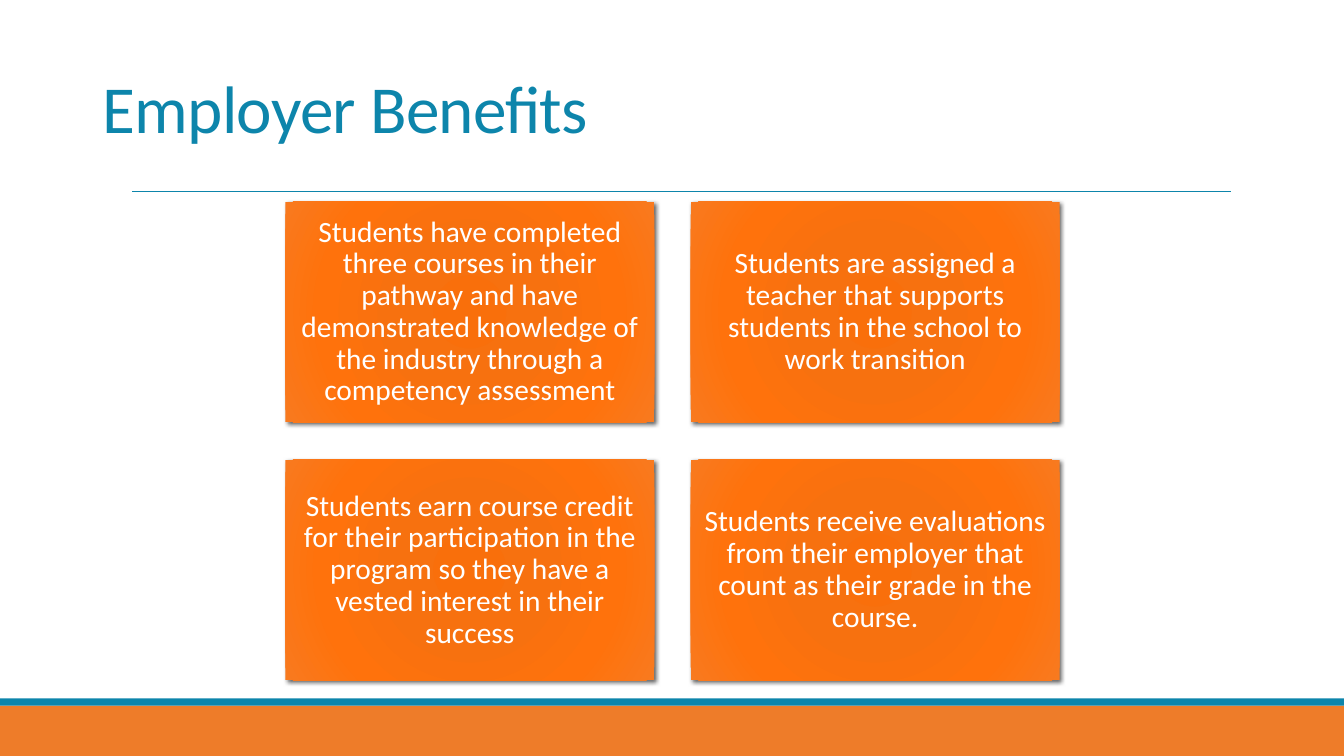
import pptx
import pptx.util
import pptx.dml.color
import pptx.enum.shapes
import pptx.enum.text
import pptx.oxml
import pptx.oxml.ns

Inches, Pt = pptx.util.Inches, pptx.util.Pt
RECT = pptx.enum.shapes.MSO_SHAPE.RECTANGLE
LINE = pptx.enum.shapes.MSO_CONNECTOR.STRAIGHT
ALIGN = pptx.enum.text.PP_ALIGN
MIDDLE = pptx.enum.text.MSO_ANCHOR.MIDDLE

# Content
TITLE = "Employer Benefits"
CARDS = [
    "Students have completed three courses in their pathway and have "
    "demonstrated knowledge of the industry through a competency assessment",
    "Students are assigned a teacher that supports students in the school "
    "to work transition",
    "Students earn course credit for their participation in the program "
    "so they have a vested interest in their success",
    "Students receive evaluations from their employer that count as their "
    "grade in the course.",
]

# Look
TEAL, ORANGE, WHITE = "0D85AB", "EE7C29", "FFFFFF"
STOPS = [(0, "F96F0B"), (34, "F7710F"), (70, "FF720C"), (100, "F87A1F")]
BANDS = [(7, 0.5, ORANGE), (6.93, 0.07, TEAL)]
HEAD = {"size": Pt(48), "name": "Calibri"}
BODY = {"size": Pt(21), "name": "Calibri"}

# Card grid
COLS, LEFT, TOP = 2, 2.83, 2
WIDE, HIGH = 3.66, 2.19
STEP_X, STEP_Y = 4.02, 2.56


def color(code):
    return pptx.dml.color.RGBColor.from_string(code)


def xml(text):
    space = pptx.oxml.ns.nsdecls("a")
    return pptx.oxml.parse_xml(text.replace(">", f" {space}>", 1))


def box(x, y, w, h):
    shape = slide.shapes.add_shape(
        RECT, Inches(x), Inches(y), Inches(w), Inches(h))
    shape.shadow.inherit = False
    shape.line.fill.background()
    return shape


def write(shape, text, look, code, align, space):
    frame = shape.text_frame
    frame.word_wrap = True
    frame.vertical_anchor = MIDDLE
    para = frame.paragraphs[0]
    para.alignment, para.line_spacing = align, space
    run = para.add_run()
    run.text = text
    for key, value in look.items():
        setattr(run.font, key, value)
    run.font.color.rgb = color(code)
    return run


def glow(shape):
    """Radial fill and soft shadow of a card."""
    shape.fill.background()
    props = shape.fill._xPr
    stops = "".join(
        f'<a:gs pos="{pos * 1000}"><a:srgbClr val="{code}"/></a:gs>'
        for pos, code in STOPS)
    props.replace(props.find(pptx.oxml.ns.qn("a:noFill")), xml(
        f'<a:gradFill rotWithShape="1"><a:gsLst>{stops}</a:gsLst>'
        '<a:path path="circle"><a:fillToRect l="100000" t="100000" '
        'r="100000" b="100000"/></a:path></a:gradFill>'))
    props.find(pptx.oxml.ns.qn("a:effectLst")).append(xml(
        f'<a:outerShdw blurRad="{Pt(3)}" dist="{Pt(2)}" dir="2700000" '
        'algn="tl" rotWithShape="0"><a:srgbClr val="000000">'
        '<a:alpha val="60000"/></a:srgbClr></a:outerShdw>'))


deck = pptx.Presentation()
deck.slide_width, deck.slide_height = Inches(13.33), Inches(7.5)
slide = deck.slides.add_slide(deck.slide_layouts[6])

# Footer bands
for y, h, code in BANDS:
    band = box(0, y, 13.33, h)
    band.fill.solid()
    band.fill.fore_color.rgb = color(code)

# Rule under the title
rule = slide.shapes.add_connector(
    LINE, Inches(1.31), Inches(1.9), Inches(12.21), Inches(1.9))
rule.line.color.rgb = color(TEAL)
rule.line.width = Pt(0.5)
rule._element.spPr.append(xml("<a:effectLst></a:effectLst>"))

# Title
title = slide.shapes.add_textbox(
    Inches(0.92), Inches(0.4), Inches(11.5), Inches(1.45))
run = write(title, TITLE, HEAD, TEAL, ALIGN.LEFT, 0.85)
run.font._element.set("spc", "-50")

# Cards
for i, text in enumerate(CARDS):
    row, col = divmod(i, COLS)
    card = box(LEFT + col * STEP_X, TOP + row * STEP_Y, WIDE, HIGH)
    glow(card)
    for side in ("left", "top", "right", "bottom"):
        setattr(card.text_frame, f"margin_{side}", Inches(0.09))
    write(card, text, BODY, WHITE, ALIGN.CENTER, 0.9)

deck.save("out.pptx")
